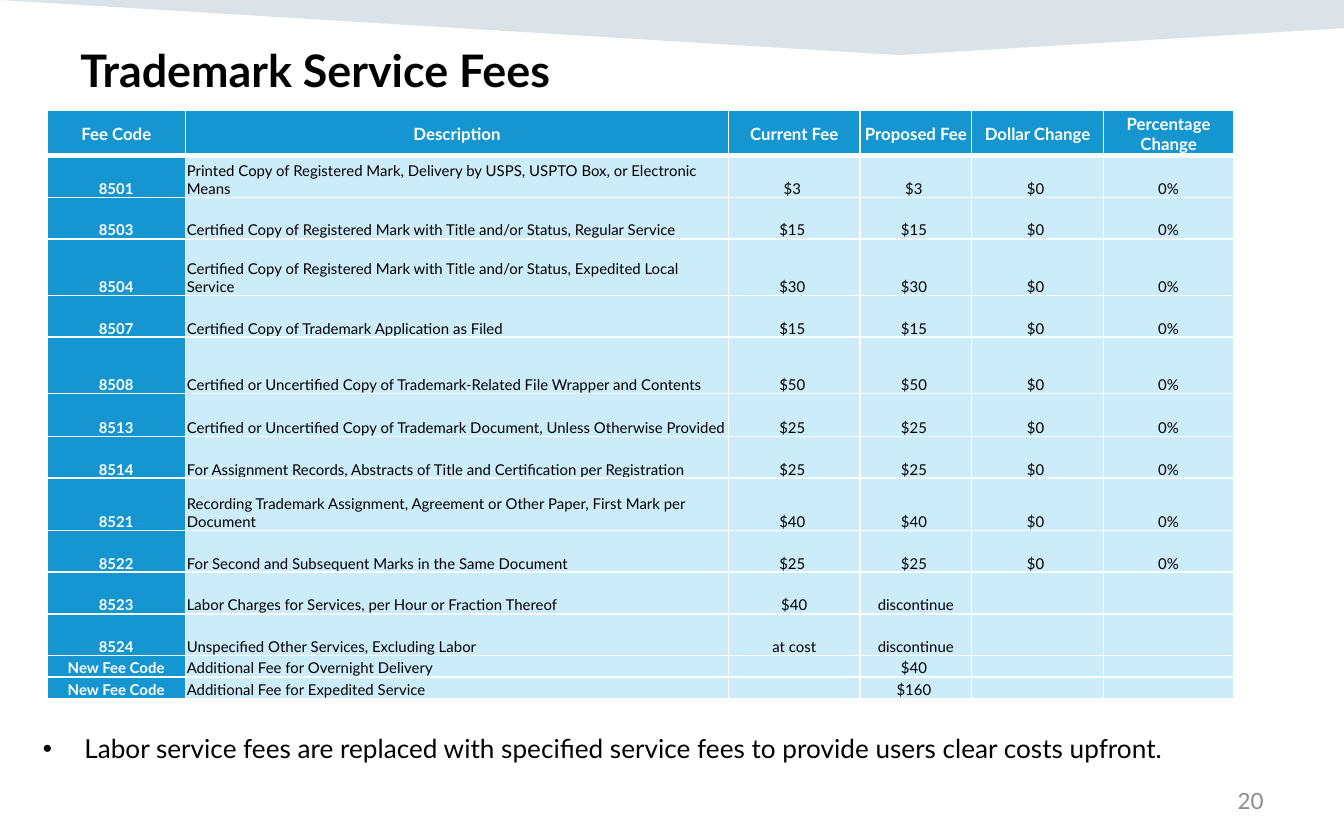
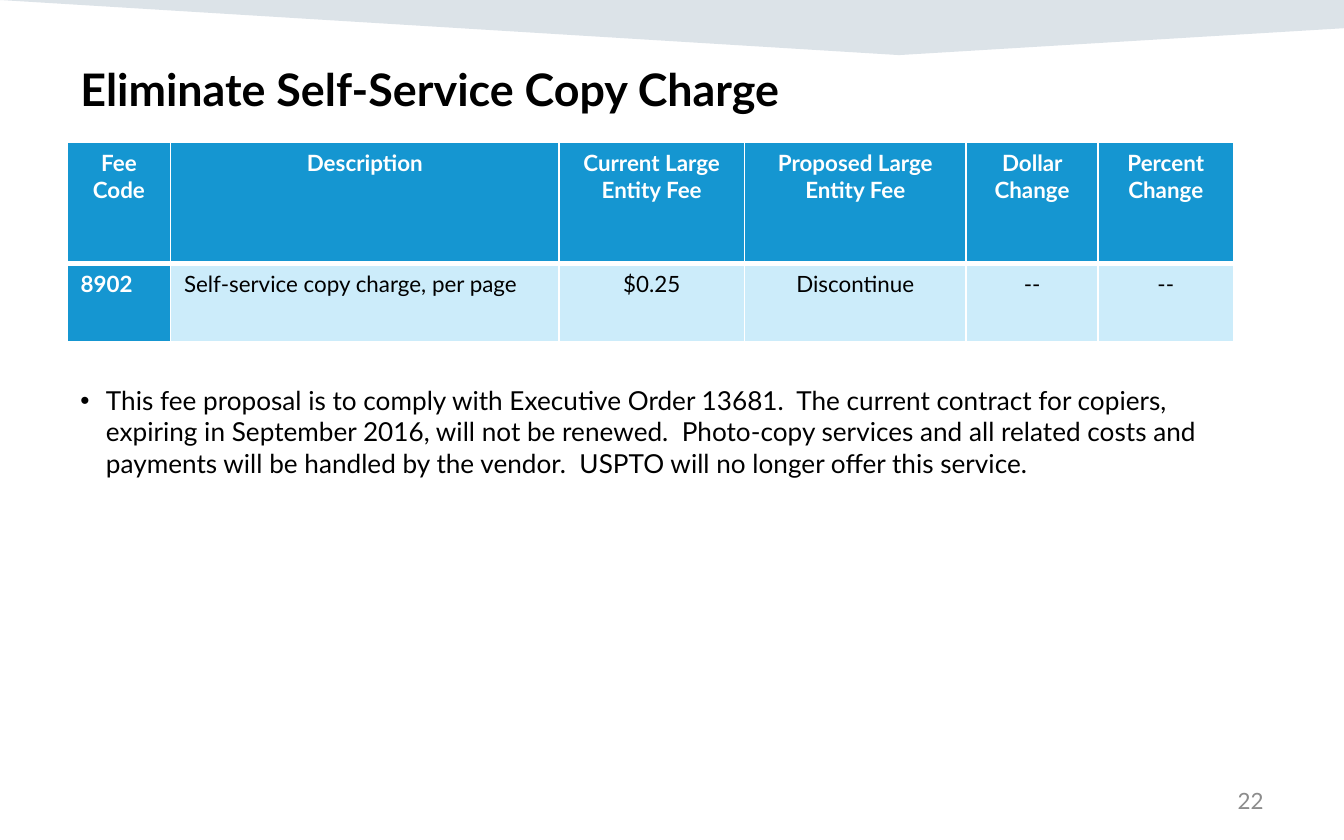
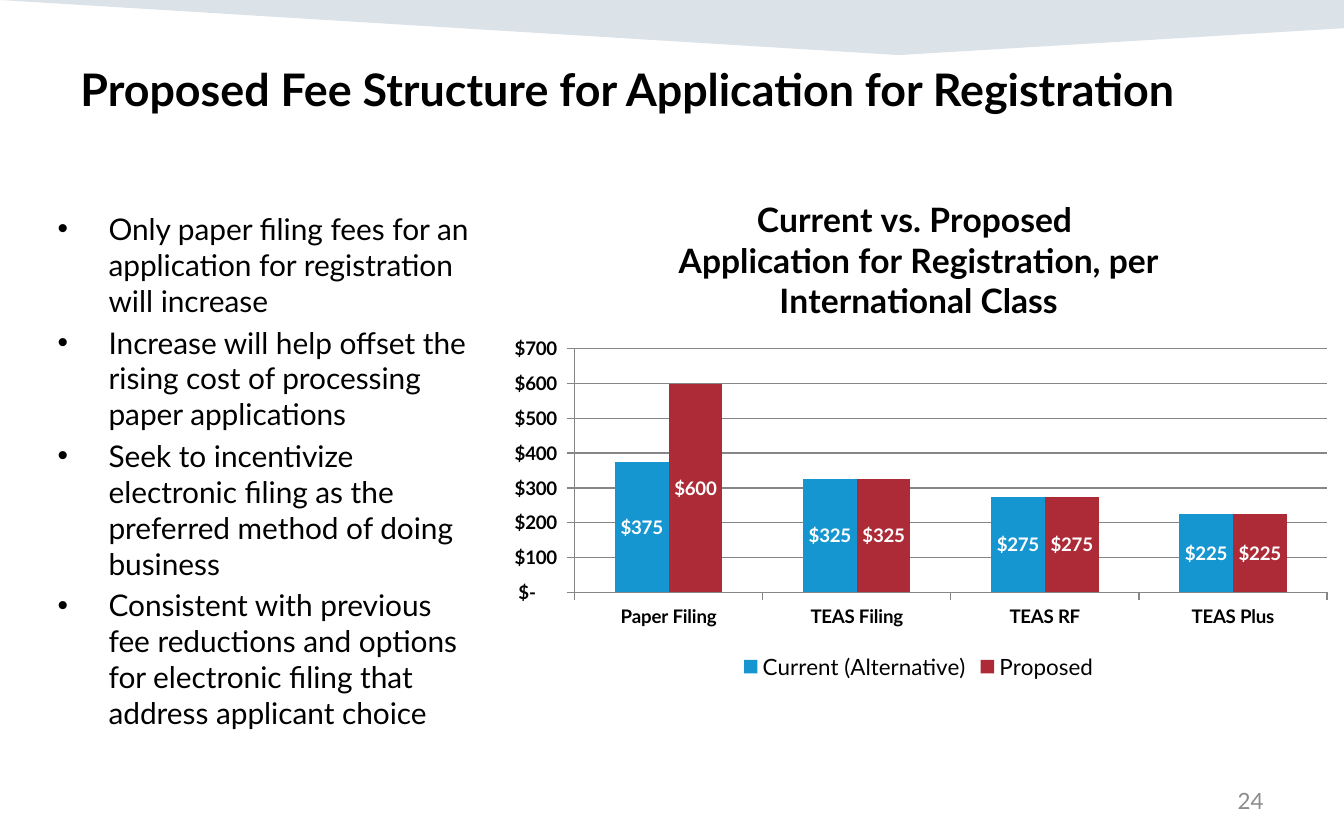
from lxml import etree
from pptx import Presentation
from pptx.chart.data import CategoryChartData
from pptx.dml.color import RGBColor
from pptx.enum.chart import XL_CHART_TYPE, XL_LABEL_POSITION, XL_LEGEND_POSITION, XL_TICK_MARK
from pptx.enum.text import MSO_ANCHOR, PP_ALIGN
from pptx.oxml.ns import qn
from pptx.util import Inches, Pt

LEFT, CENTER, RIGHT = PP_ALIGN.LEFT, PP_ALIGN.CENTER, PP_ALIGN.RIGHT
TOP, MIDDLE, BOTTOM = MSO_ANCHOR.TOP, MSO_ANCHOR.MIDDLE, MSO_ANCHOR.BOTTOM
COLUMNS = XL_CHART_TYPE.COLUMN_CLUSTERED
LABEL_CENTER = XL_LABEL_POSITION.CENTER
LEGEND_BOTTOM = XL_LEGEND_POSITION.BOTTOM
TICK_OUT = XL_TICK_MARK.OUTSIDE

FONT = "Lato"
BLACK = RGBColor(0x00, 0x00, 0x00)
WHITE = RGBColor(0xFF, 0xFF, 0xFF)
GRAY = RGBColor(0x8C, 0x8C, 0x8C)
AXIS_GRAY = RGBColor(0x86, 0x86, 0x86)
NAVY = RGBColor(0x16, 0x44, 0x69)
BLUE = RGBColor(0x15, 0x96, 0xD1)
PALE_BLUE = RGBColor(0xCC, 0xEC, 0xFA)
RED = RGBColor(0xAC, 0x2B, 0x37)
DOLLARS = '_("$"* #,##0_);_("$"* \\(#,##0\\);_("$"* "-"??_);_(@_)'
BAND_POINTS = [(10, 0), (10, 0.21), (6.69, 0.41)]


def add_text(s, box, lines, size, color=BLACK, bold=False, align=LEFT, anchor=TOP, indent=0):
    tf = s.shapes.add_textbox(*[Inches(v) for v in box]).text_frame
    tf.word_wrap = True
    tf.vertical_anchor = anchor
    for i, line in enumerate(lines):
        p = tf.add_paragraph() if i else tf.paragraphs[0]
        p.text = line
        p.alignment = align
        if i:
            p.space_before = Pt(size * 0.2)
        if indent:
            pPr = p._p.get_or_add_pPr()
            pPr.set("marL", str(Inches(indent)))
            pPr.set("indent", str(-Inches(indent)))
            etree.SubElement(pPr, qn("a:buFont")).set("typeface", "Arial")
            etree.SubElement(pPr, qn("a:buChar")).set("char", "•")
        font = p.runs[0].font
        font.name, font.size, font.bold = FONT, Pt(size), bold
        font.color.rgb = color


def add_fee_table(s, left, top, widths, heights, rows, head_size, size,
                  left_columns, head_anchor=TOP, anchor=TOP, margins=None):
    table = s.shapes.add_table(len(rows), len(widths), Inches(left), Inches(top),
                               Inches(sum(widths)), Inches(sum(heights))).table
    for column, width in zip(table.columns, widths):
        column.width = Inches(width)
    for i, row in enumerate(rows):
        table.rows[i].height = Inches(heights[i])
        for j, text in enumerate(row):
            cell = table.cell(i, j)
            strong = i == 0 or j == 0
            tcPr = cell._tc.get_or_add_tcPr()
            for side in ("L", "R", "T", "B"):
                thick = (i, side) in ((0, "B"), (1, "T"))
                ln = etree.SubElement(tcPr, qn("a:ln" + side), w=str(Pt(3 if thick else 1)))
                fill = etree.SubElement(ln, qn("a:solidFill"))
                etree.SubElement(fill, qn("a:srgbClr")).set("val", str(WHITE))
            cell.fill.solid()
            cell.fill.fore_color.rgb = BLUE if strong else PALE_BLUE
            cell.vertical_anchor = anchor if i else head_anchor
            if margins:
                (cell.margin_left, cell.margin_top, cell.margin_right,
                 cell.margin_bottom) = [Inches(m) for m in margins]
            p = cell.text_frame.paragraphs[0]
            p.text = text
            p.alignment = LEFT if i and j in left_columns else CENTER
            points = size if i else head_size
            for r in p.runs:
                r.font.name, r.font.size, r.font.bold = FONT, Pt(points), strong
                r.font.color.rgb = WHITE if strong else BLACK
            if not text:
                p._p.get_or_add_endParaRPr().set("sz", str(points * 100))


prs = Presentation()
prs.slide_width, prs.slide_height = Inches(10), Inches(6.25)

slides = []
for title, title_top, title_height, number in [
    ("Trademark Service Fees", 0.27, 0.97, "20"),
    ("Eliminate Self-Service Copy Charge", 0.41, 0.56, "22"),
    ("Proposed Fee Structure for Application for Registration", 0.41, 0.51, "24"),
]:
    s = prs.slides.add_slide(prs.slide_layouts[6])
    builder = s.shapes.build_freeform(0, 0)
    builder.add_line_segments([(Inches(x), Inches(y)) for x, y in BAND_POINTS], close=True)
    band = builder.convert_to_shape()
    band.shadow.inherit = False
    band.line.fill.background()
    band.fill.solid()
    band.fill.fore_color.rgb = NAVY
    color = band._element.spPr.find(qn("a:solidFill"))[0]
    etree.SubElement(color, qn("a:alpha")).set("val", "15000")
    add_text(s, (0.5, title_top, 9, title_height), [title], 24, bold=True)
    add_text(s, (7.17, 5.79, 2.33, 0.33), [number], 12, GRAY, align=RIGHT, anchor=MIDDLE)
    slides.append(s)
service_slide, copy_slide, filing_slide = slides

service_rows = [
    ("Fee Code", "Description", "Current Fee", "Proposed Fee", "Dollar Change", "Percentage Change"),
]
for code, description, fee in [
    ("8501", "Printed Copy of Registered Mark, Delivery by USPS, USPTO Box, or Electronic Means", "$3 "),
    ("8503", "Certified Copy of Registered Mark with Title and/or Status, Regular Service", "$15 "),
    ("8504", "Certified Copy of Registered Mark with Title and/or Status, Expedited Local Service", "$30 "),
    ("8507", "Certified Copy of Trademark Application as Filed", "$15 "),
    ("8508", "Certified or Uncertified Copy of Trademark-Related File Wrapper and Contents", "$50 "),
    ("8513", "Certified or Uncertified Copy of Trademark Document, Unless Otherwise Provided", "$25 "),
    ("8514", "For Assignment Records, Abstracts of Title and Certification per Registration", "$25 "),
    ("8521", "Recording Trademark Assignment, Agreement or Other Paper, First Mark per Document", "$40 "),
    ("8522", "For Second and Subsequent Marks in the Same Document", "$25 "),
]:
    service_rows.append((code, description, fee, fee, "$0 ", "0%"))
service_rows += [
    ("8523", "Labor Charges for Services, per Hour or Fraction Thereof", "$40", "discontinue", "", ""),
    ("8524", "Unspecified Other Services, Excluding Labor", "at cost", "discontinue", "", ""),
    ("New Fee Code", "Additional Fee for Overnight Delivery", "", "$40 ", "", ""),
    ("New Fee Code", "Additional Fee for Expedited Service", "", "$160 ", "", ""),
]
add_fee_table(
    service_slide, 0.35, 0.82, [1.03, 4.04, 0.98, 0.83, 0.98, 0.97],
    [0.34, 0.31, 0.31, 0.42, 0.31, 0.42, 0.32, 0.31, 0.39, 0.31, 0.31, 0.31, 0.16, 0.16],
    service_rows, 9, 8, [1], MIDDLE, BOTTOM, (0.01, 0.01, 0.01, 0))
add_text(service_slide, (0.22, 5.4, 9.11, 0.34), [
    "Labor service fees are replaced with specified service fees to provide users clear costs upfront.",
], 14, indent=0.31)

copy_rows = [
    ("Fee Code", "Description", "Current Large Entity Fee", "Proposed Large Entity Fee",
     "Dollar Change", "Percent Change"),
    ("8902", "Self-service copy charge, per page", "$0.25", "Discontinue", "--", "--"),
]
add_fee_table(copy_slide, 0.5, 1.06, [0.77, 2.89, 1.38, 1.65, 0.98, 1.01], [0.9, 0.58],
              copy_rows, 12, 12, [0, 1])
add_text(copy_slide, (0.5, 2.81, 8.54, 0.81), [
    "This fee proposal is to comply with Executive Order 13681.  The current contract for copiers, "
    "expiring in September 2016, will not be renewed.  Photo-copy services and all related costs and "
    "payments will be handled by the vendor.  USPTO will no longer offer this service.",
], 14, indent=0.19)

add_text(filing_slide, (0.33, 1.52, 3.33, 4.04), [
    "Only paper filing fees for an application for registration will increase",
    "Increase will help offset the rising cost of processing paper applications",
    "Seek to incentivize electronic filing as the preferred method of doing business",
    "Consistent with previous fee reductions and options for electronic filing that address applicant choice",
], 16, indent=0.38)

data = CategoryChartData(number_format=DOLLARS)
data.categories = ["Paper Filing", "TEAS Filing", "TEAS RF", "TEAS Plus"]
data.add_series("Current (Alternative)", [375, 325, 275, 225])
data.add_series("Proposed", [600, 325, 275, 225])
chart = filing_slide.shapes.add_chart(
    COLUMNS, Inches(3.67), Inches(1.3), Inches(6.33), Inches(3.8), data).chart
chart.font.name, chart.font.size = FONT, Pt(10)
chart.font.color.rgb = BLACK

tf = chart.chart_title.text_frame
tf.text = "Current vs. Proposed \nApplication for Registration, per International Class"
for p in tf.paragraphs:
    font = p.runs[0].font
    font.name, font.size, font.bold = FONT, Pt(18), True
    font.color.rgb = BLACK
chart.chart_title.include_in_layout = False

chart.has_legend = True
chart.legend.position = LEGEND_BOTTOM
chart.legend.include_in_layout = False
chart.legend.font.name, chart.legend.font.size = FONT, Pt(12)

for axis in (chart.category_axis, chart.value_axis):
    axis.major_tick_mark = TICK_OUT
    axis.format.line.color.rgb = AXIS_GRAY
    font = axis.tick_labels.font
    font.name, font.size, font.bold = FONT, Pt(10), True
value_axis = chart.value_axis
value_axis.minimum_scale, value_axis.maximum_scale, value_axis.major_unit = 0, 700, 100
value_axis.major_gridlines.format.line.color.rgb = AXIS_GRAY
value_axis.tick_labels.number_format = DOLLARS
value_axis.tick_labels.number_format_is_linked = False

plot = chart.plots[0]
plot.gap_width, plot.overlap = 150, 0
plot.vary_by_categories = False
for series, color in zip(plot.series, (BLUE, RED)):
    series.format.fill.solid()
    series.format.fill.fore_color.rgb = color
    labels = series.data_labels
    labels.show_value = True
    labels.position = LABEL_CENTER
    labels.number_format = DOLLARS
    labels.number_format_is_linked = False
    labels.font.name, labels.font.size, labels.font.bold = FONT, Pt(10), True
    labels.font.color.rgb = WHITE

prs.save("out.pptx")
